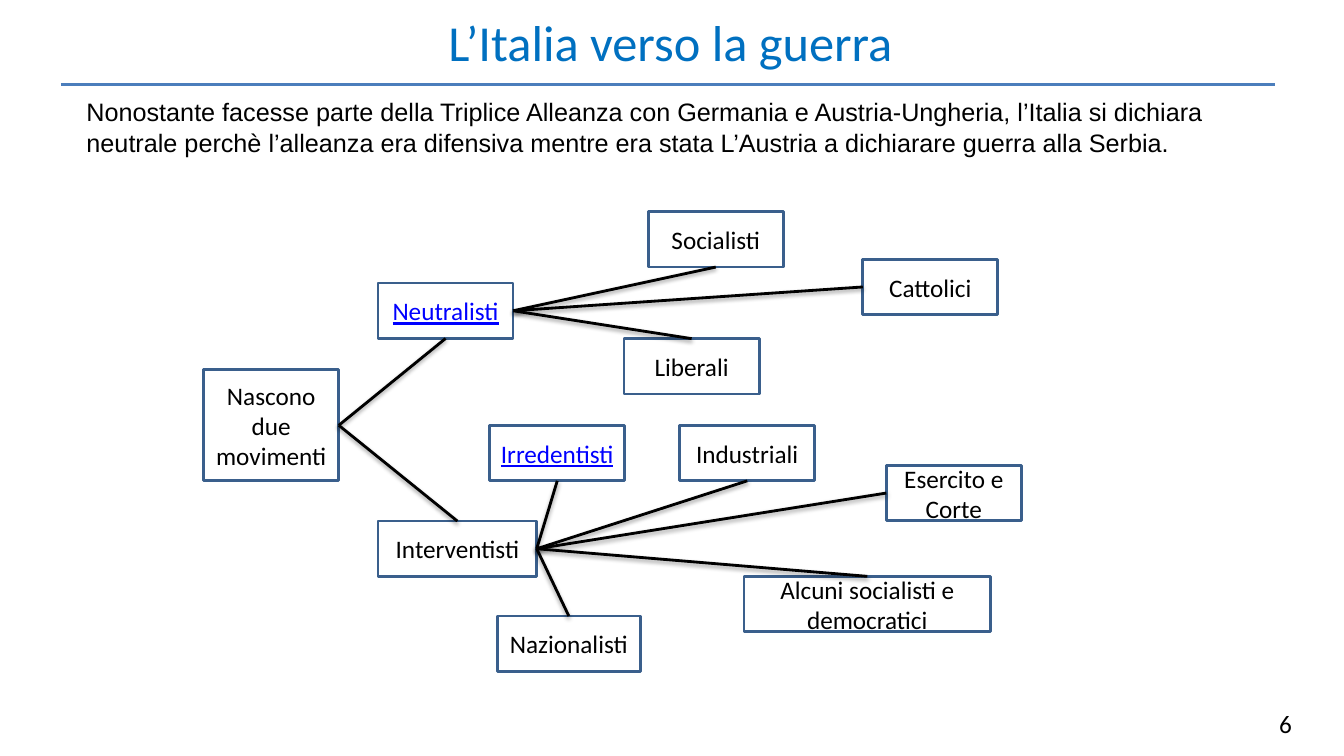
from collections import namedtuple

from lxml.etree import SubElement
from pptx import Presentation
from pptx.dml.color import RGBColor
from pptx.enum.shapes import MSO_CONNECTOR, MSO_SHAPE
from pptx.enum.text import MSO_ANCHOR, PP_ALIGN
from pptx.oxml.ns import qn
from pptx.util import Pt

BLACK = RGBColor(0x00, 0x00, 0x00)
TITLE_BLUE = RGBColor(0x00, 0x70, 0xC0)
RULE_BLUE = RGBColor(0x4B, 0x7E, 0xBC)
BORDER_BLUE = RGBColor(0x3A, 0x5F, 0x8C)
LINK_BLUE = RGBColor(0x00, 0x00, 0xFF)

TOP, LEFT, BOTTOM, RIGHT = range(4)  # connection sites of a rectangle
NODE_WIDTH, NODE_HEIGHT = 96.5, 39.6

Box = namedtuple("Box", "left top width height")

# name: (x, y, width, height) within the diagram
NODES = {
    "Nascono\ndue\nmovimenti": (0, 113, NODE_WIDTH, 2 * NODE_HEIGHT),
    "Neutralisti": (124.5, 51, NODE_WIDTH, NODE_HEIGHT),
    "Interventisti": (124.5, 221, 113.4, NODE_HEIGHT),
    "Socialisti": (317.5, 0, NODE_WIDTH, NODE_HEIGHT),
    "Cattolici": (470.8, 34, NODE_WIDTH, NODE_HEIGHT),
    "Liberali": (300.3, 90.7, NODE_WIDTH, NODE_HEIGHT),
    "Irredentisti": (204.3, 152.7, NODE_WIDTH, NODE_HEIGHT),
    "Nazionalisti": (209.7, 288.8, 102.2, NODE_HEIGHT),
    "Industriali": (340, 152.7, NODE_WIDTH, NODE_HEIGHT),
    "Esercito e Corte": (487.6, 181.2, NODE_WIDTH, NODE_HEIGHT),
    "Alcuni socialisti e democratici": (386, 260.5, 176, NODE_HEIGHT),
}
LINKED = {"Neutralisti", "Irredentisti"}

# parent: the children with the side each line reaches
BRANCHES = {
    "Nascono\ndue\nmovimenti": [("Neutralisti", BOTTOM), ("Interventisti", TOP)],
    "Neutralisti": [("Socialisti", BOTTOM), ("Cattolici", LEFT), ("Liberali", TOP)],
    "Interventisti": [
        ("Nazionalisti", TOP),
        ("Irredentisti", BOTTOM),
        ("Industriali", BOTTOM),
        ("Esercito e Corte", LEFT),
        ("Alcuni socialisti e democratici", TOP),
    ],
}


def write(shape, text, size, color, font="Calibri", align=PP_ALIGN.CENTER,
          anchor=MSO_ANCHOR.MIDDLE, underline=None):
    frame = shape.text_frame
    frame.word_wrap = True
    frame.vertical_anchor = anchor
    frame.text = text
    for para in frame.paragraphs:
        para.alignment = align
        para.font.name = font
        para.font.size = Pt(size)
        para.font.color.rgb = color
        para.font.underline = underline


def add_text(page, box, text, size, color, **style):
    shape = page.shapes.add_textbox(*map(Pt, box))
    write(shape, text, size, color, **style)


def add_line(page, start, end, color):
    line = page.shapes.add_connector(MSO_CONNECTOR.STRAIGHT, *map(Pt, start + end))
    line.line.color.rgb = color
    line.line.width = Pt(2)
    effects = SubElement(line._element.spPr, qn("a:effectLst"))
    return line, effects


def add_soft_shadow(effects):
    shadow = SubElement(effects, qn("a:outerShdw"), blurRad="40000", dist="20000",
                        dir="5400000", rotWithShape="0")
    shade = SubElement(shadow, qn("a:srgbClr"), val=str(BLACK))
    SubElement(shade, qn("a:alpha"), val="38000")


def add_node(page, box, name):
    node = page.shapes.add_shape(MSO_SHAPE.RECTANGLE, *map(Pt, box))
    node.shadow.inherit = False
    node.fill.background()
    node.line.color.rgb = BORDER_BLUE
    node.line.width = Pt(2)
    linked = name in LINKED
    write(node, name, 18, LINK_BLUE if linked else BLACK, underline=linked)
    return node


def add_header(page, box):
    """Title centred in the box, with a rule along its bottom edge."""
    title = Box(box.left + 111.5, box.top, 648, 50)
    add_text(page, title, "L’Italia verso la guerra", 36, TITLE_BLUE)
    bottom = box.top + box.height
    add_line(page, (box.left, bottom), (box.left + box.width, bottom), RULE_BLUE)


def add_diagram(page, box):
    nodes = {}
    for name, (x, y, width, height) in NODES.items():
        place = Box(box.left + x, box.top + y, width, height)
        nodes[name] = add_node(page, place, name)
    for parent, children in BRANCHES.items():
        for child, side in children:
            line, effects = add_line(page, (0, 0), (0, 0), BLACK)
            line.begin_connect(nodes[parent], RIGHT)
            line.end_connect(nodes[child], side)
            add_soft_shadow(effects)


def main():
    deck = Presentation()
    deck.slide_width, deck.slide_height = Pt(960), Pt(540)
    page = deck.slides.add_slide(deck.slide_layouts[6])
    add_header(page, Box(43.5, 4.5, 867.5, 56))
    add_text(
        page, Box(54.7, 65.5, 839, 51),
        "Nonostante facesse parte della Triplice Alleanza con Germania e "
        "Austria-Ungheria, l’Italia si dichiara neutrale perchè l’alleanza era "
        "difensiva mentre era stata L’Austria a dichiarare guerra alla Serbia.",
        18, BLACK, font="Arial", align=PP_ALIGN.LEFT, anchor=MSO_ANCHOR.TOP)
    add_diagram(page, Box(145.5, 151.2, 590, 330))
    add_text(page, Box(880.5, 502.5, 75.6, 29), "6", 18, BLACK, anchor=MSO_ANCHOR.TOP)
    deck.save("out.pptx")


if __name__ == "__main__":
    main()
